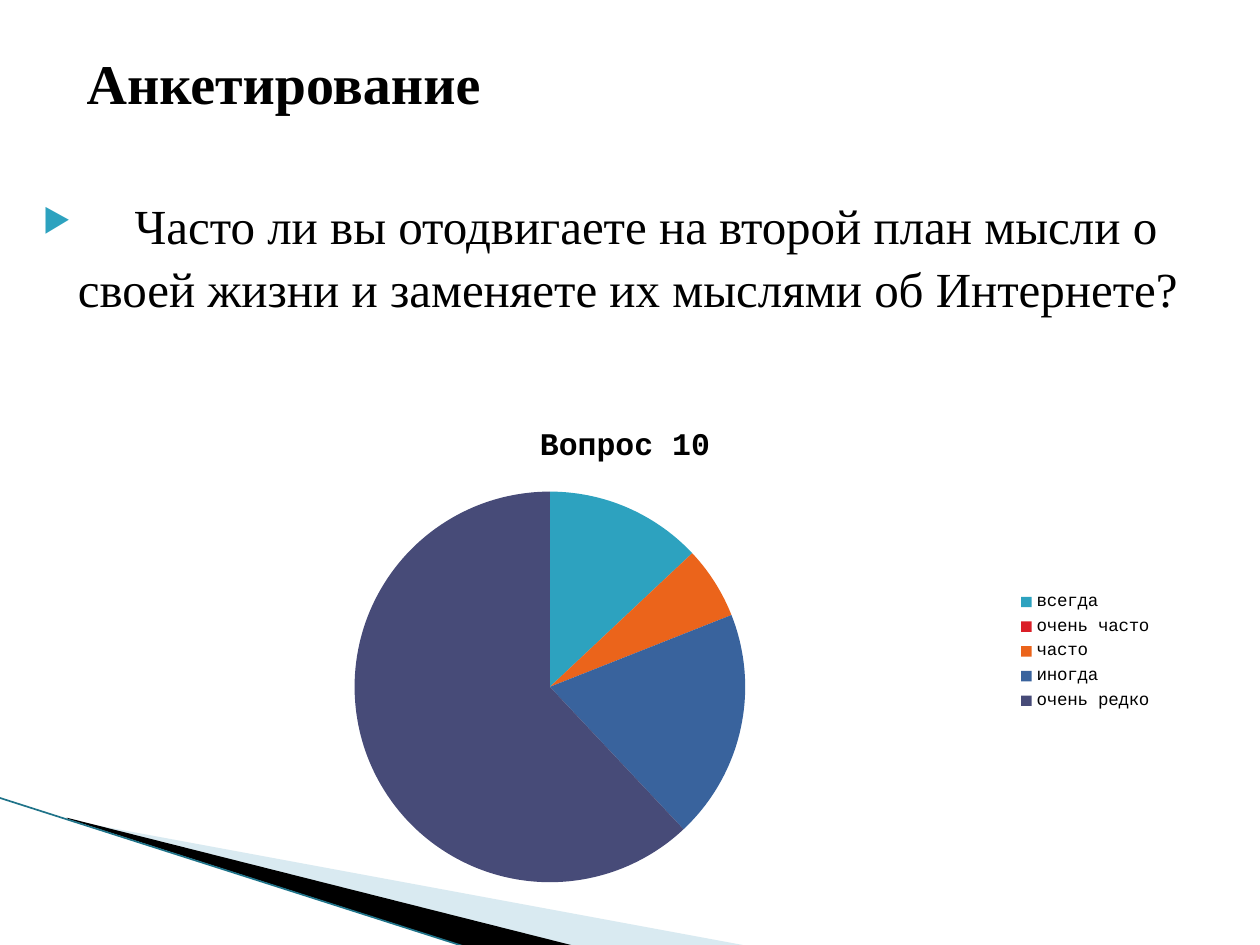
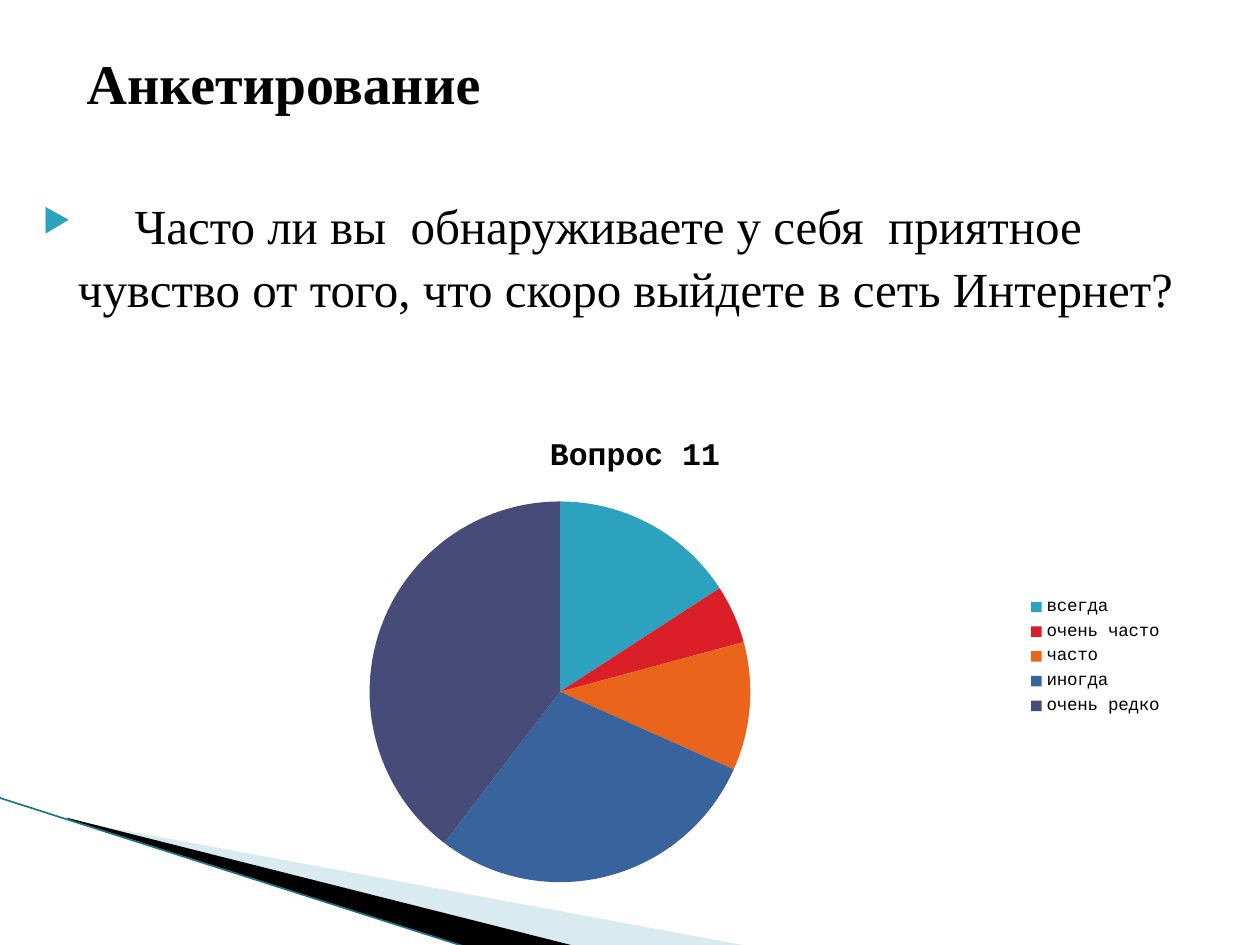
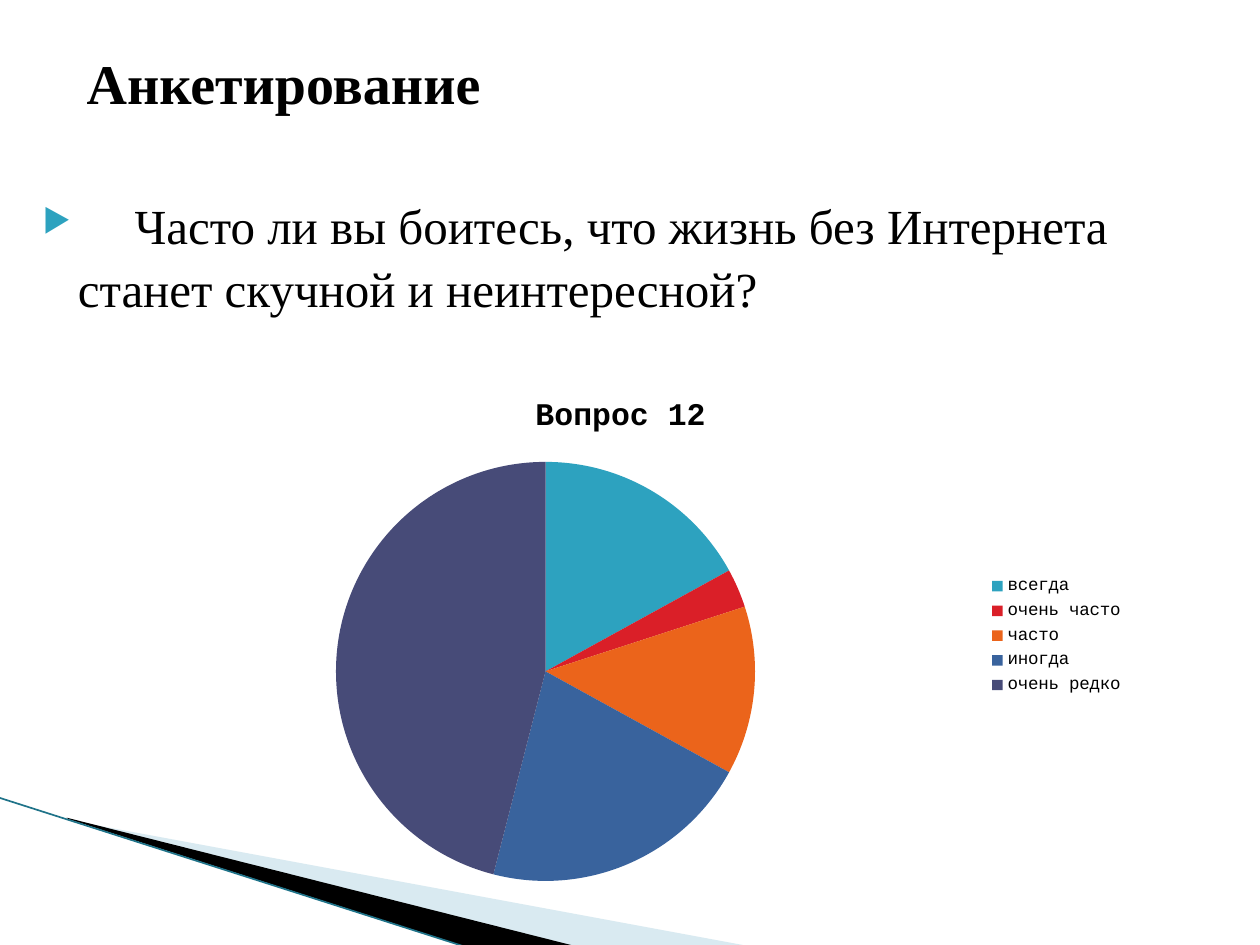
from lxml import etree
from pptx import Presentation
from pptx import util as u
from pptx.chart.data import CategoryChartData
from pptx.dml.color import RGBColor
from pptx.enum import chart as charts, shapes, text
from pptx.oxml.ns import qn

TITLE = "Анкетирование"
ANSWERS = ["всегда", "очень часто", "часто", "иногда", "очень редко"]
QUESTIONS = [
    {"question": "Часто ли вы отодвигаете на второй план мысли о своей жизни "
                 "и заменяете их мыслями об Интернете?",
     "chart_title": "Вопрос 10", "values": [13, 0, 6, 19, 62],
     "chart_box": (0.67, 3.2, 8.58, 3.94)},
    {"question": "Часто ли вы  обнаруживаете у себя  приятное чувство от того, "
                 "что скоро выйдете в сеть Интернет?",
     "chart_title": "Вопрос 11", "values": [16, 5, 11, 29, 40],
     "chart_box": (0.75, 3.28, 8.58, 3.86)},
    {"question": "Часто ли вы боитесь, что жизнь без Интернета станет скучной "
                 "и неинтересной?",
     "chart_title": "Вопрос 12", "values": [17, 3, 13, 21, 46],
     "chart_box": (0.83, 2.96, 8.19, 4.17)},
]

COLOURS = {"text": "000000", "bullet": "2DA2BF", "pale": "A0CBDC",
           "dark": "000000", "edge": "1F7389"}
SLICE_COLOURS = ["2DA2BF", "DA1F28", "EB641B", "39639D", "474B78"]
SERIF, MONO = "Times New Roman", "Courier New"
FORMATS = {
    "title": {"name": SERIF, "size": u.Pt(32), "bold": True},
    "question": {"name": SERIF, "size": u.Pt(28)},
    "lead": {"name": MONO, "size": u.Pt(27)},
    "chart": {"name": MONO, "size": u.Pt(10)},
    "chart_title": {"name": MONO, "size": u.Pt(18), "bold": True},
}

TITLE_BOX = (0.59, 0.03, 8.17, 1.25)
QUESTION_BOX = (0.12, 1.47, 9.58, 6.01)
WEDGES = [
    {"points": [(0.55, 6.51), (5.95, 7.51), (4.56, 7.51), (0.55, 6.5)],
     "colour": "pale", "opacity": 40},
    {"points": [(0.53, 6.49), (4.57, 7.51), (3.72, 7.52), (0.54, 6.5)],
     "colour": "dark", "opacity": 100},
]
EDGE = (-0.01, 6.33, 3.71, 7.52)


def inches(values):
    return [u.Inches(value) for value in values]


def rgb(name):
    return RGBColor.from_string(COLOURS[name])


def style_font(font, style):
    for attribute, value in FORMATS[style].items():
        setattr(font, attribute, value)
    font.color.rgb = rgb("text")


def add_corner(slide):
    """Draw the wedges and thin edge in the lower left corner."""
    for wedge in WEDGES:
        start, *rest = [inches(point) for point in wedge["points"]]
        builder = slide.shapes.build_freeform(*start)
        builder.add_line_segments(rest)
        shape = builder.convert_to_shape()
        shape.shadow.inherit = False
        shape.line.fill.background()
        shape.fill.solid()
        shape.fill.fore_color.rgb = rgb(wedge["colour"])
        if wedge["opacity"] < 100:
            colour = shape.fill._xPr.find(".//" + qn("a:srgbClr"))
            etree.SubElement(colour, qn("a:alpha"), val=str(wedge["opacity"] * 1000))
    edge = slide.shapes.add_connector(shapes.MSO_CONNECTOR.STRAIGHT, *inches(EDGE))
    edge.line.color.rgb = rgb("edge")
    edge.line.width = u.Pt(0.95)
    etree.SubElement(edge._element.spPr, qn("a:effectLst"))


def add_text_box(slide, box, anchor):
    frame = slide.shapes.add_textbox(*inches(box)).text_frame
    frame.word_wrap = True
    frame.vertical_anchor = anchor
    return frame.paragraphs[0]


def add_run(paragraph, words, style):
    run = paragraph.add_run()
    run.text = words
    style_font(run.font, style)
    return run


def add_bullet(paragraph):
    properties = paragraph._p.get_or_add_pPr()
    properties.set("marL", str(u.Inches(0.4)))
    properties.set("indent", str(u.Inches(-0.28)))
    colour = etree.SubElement(properties, qn("a:buClr"))
    etree.SubElement(colour, qn("a:srgbClr"), val=COLOURS["bullet"])
    etree.SubElement(properties, qn("a:buSzPct"), val="68000")
    etree.SubElement(properties, qn("a:buChar"), char="▶")


def add_question(slide, question):
    paragraph = add_text_box(slide, QUESTION_BOX, text.MSO_ANCHOR.TOP)
    add_bullet(paragraph)
    paragraph.line_spacing = 1.07
    lead = add_run(paragraph, " ", "lead")
    lead.font._element.set("spc", "1620")  # widens the lead-in to two characters
    add_run(paragraph, question, "question")


def add_pie(slide, item):
    data = CategoryChartData()
    data.categories = ANSWERS
    data.add_series("Series 1", item["values"])
    chart = slide.shapes.add_chart(
        charts.XL_CHART_TYPE.PIE, *inches(item["chart_box"]), data).chart
    style_font(chart.font, "chart")
    chart.has_title = True
    title = chart.chart_title.text_frame.paragraphs[0]
    add_run(title, item["chart_title"], "chart_title")
    chart.chart_title.include_in_layout = False
    chart.has_legend = True
    chart.legend.position = charts.XL_LEGEND_POSITION.RIGHT
    chart.legend.include_in_layout = False
    plot = chart.plots[0]
    plot.vary_by_categories = True
    for index, colour in enumerate(SLICE_COLOURS):
        slice_format = plot.series[0].points[index].format
        slice_format.fill.solid()
        slice_format.fill.fore_color.rgb = RGBColor.from_string(colour)
        slice_format.line.fill.background()


def main():
    presentation = Presentation()
    presentation.slide_width, presentation.slide_height = inches((10, 7.5))
    for item in QUESTIONS:
        slide = presentation.slides.add_slide(presentation.slide_layouts[6])
        add_corner(slide)
        add_question(slide, item["question"])
        add_run(add_text_box(slide, TITLE_BOX, text.MSO_ANCHOR.MIDDLE), TITLE, "title")
        add_pie(slide, item)
    presentation.save("out.pptx")


if __name__ == "__main__":
    main()
